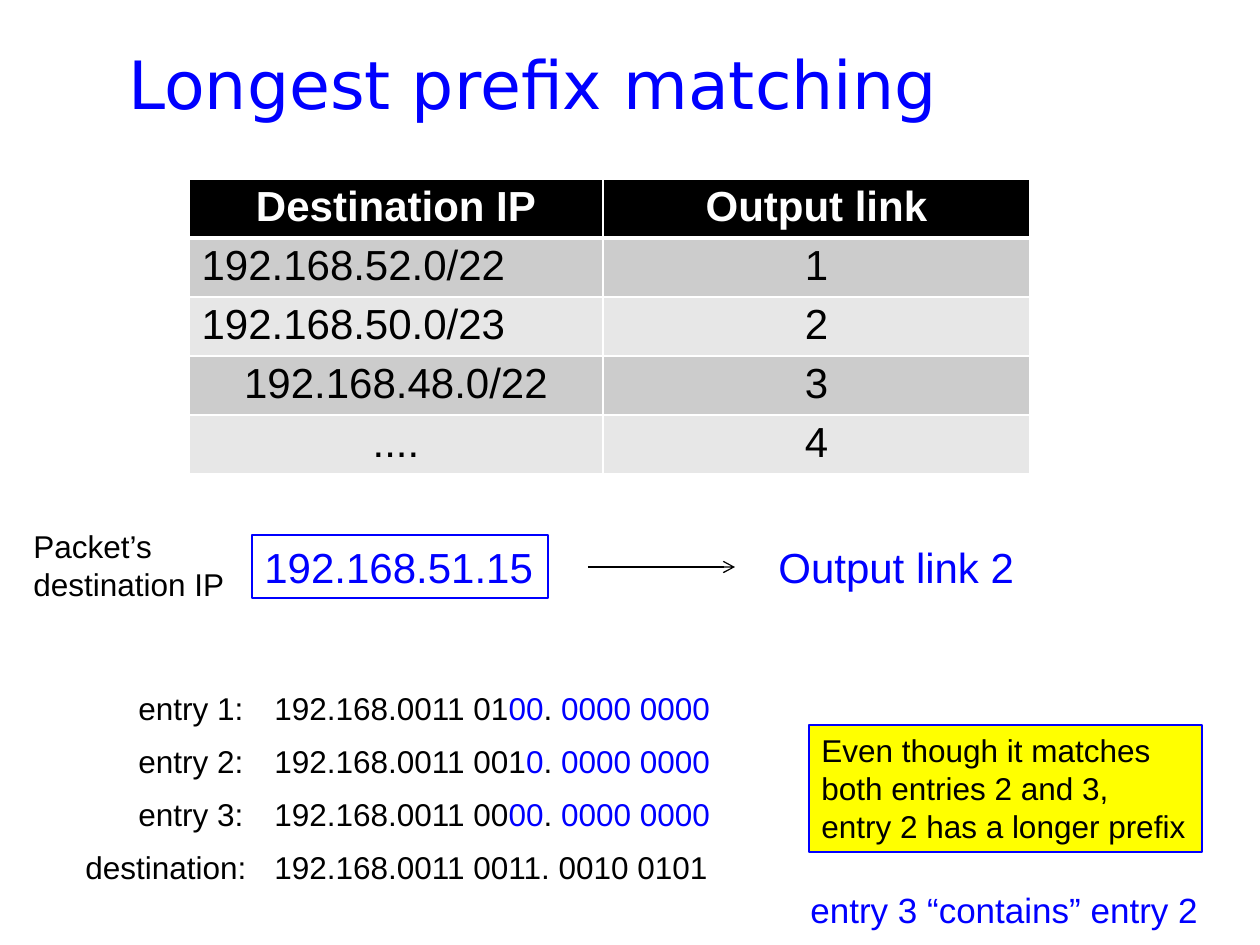
from lxml import etree
from pptx import Presentation
from pptx.dml.color import RGBColor
from pptx.enum.shapes import MSO_CONNECTOR, MSO_SHAPE
from pptx.enum.text import MSO_ANCHOR, MSO_AUTO_SIZE, PP_ALIGN
from pptx.oxml.ns import qn
from pptx.util import Emu, Pt

LEFT, CENTER = PP_ALIGN.LEFT, PP_ALIGN.CENTER
TOP = MSO_ANCHOR.TOP
FIT_SHAPE, NO_FIT = MSO_AUTO_SIZE.SHAPE_TO_FIT_TEXT, MSO_AUTO_SIZE.NONE
RECTANGLE, STRAIGHT = MSO_SHAPE.RECTANGLE, MSO_CONNECTOR.STRAIGHT

EMU_PER_PX = 914400 / 126
COLORS = {
    "white": "FFFFFF", "black": "000000", "blue": "0000FF",
    "yellow": "FFFF00", "dark band": "CCCCCC", "light band": "E7E7E7",
}


def px(length):
    return Emu(round(length * EMU_PER_PX))


def rgb(color):
    return RGBColor.from_string(COLORS[color])


def apply(target, values):
    """Set each named attribute of the target."""
    for attribute, value in values.items():
        setattr(target, attribute, value)


class SlideBuilder:
    """Holds the text style and the slide being filled."""

    font = "Arial"
    thin_line = Pt(0.75)
    fitted = {"word_wrap": False, "auto_size": FIT_SHAPE, "vertical_anchor": TOP}

    def __init__(self, slide):
        self.slide = slide

    def add_lines(self, frame, lines, size, color, align=LEFT, font=None, bold=False):
        """Fill a frame; a line is a string or a list of (text, color) runs."""
        for index, line in enumerate(lines):
            paragraph = frame.add_paragraph() if index else frame.paragraphs[0]
            paragraph.alignment = align
            runs = [(line, color)] if isinstance(line, str) else line
            for text, run_color in runs:
                run = paragraph.add_run()
                run.text = text
                apply(run.font, {"name": font or self.font, "size": Pt(size), "bold": bold})
                run.font.color.rgb = rgb(run_color)

    def title(self, box, text, size, color, font):
        frame = self.slide.shapes.add_textbox(*map(px, box)).text_frame
        apply(frame, {"word_wrap": True, "auto_size": NO_FIT,
                      "vertical_anchor": TOP, "margin_top": px(11)})
        self.add_lines(frame, [text], size, color, font=font)

    def text(self, box, lines, size=18, color="black"):
        frame = self.slide.shapes.add_textbox(*map(px, box)).text_frame
        apply(frame, self.fitted)
        self.add_lines(frame, lines, size, color)

    def box(self, box, lines, size, color, fill=None):
        shape = self.slide.shapes.add_shape(RECTANGLE, *map(px, box))
        shape.shadow.inherit = False
        if fill:
            shape.fill.solid()
            shape.fill.fore_color.rgb = rgb(fill)
        else:
            shape.fill.background()
        shape.line.color.rgb = rgb("blue")
        shape.line.width = self.thin_line
        apply(shape.text_frame, self.fitted)
        self.add_lines(shape.text_frame, lines, size, color)

    def arrow(self, x1, y1, x2, y2):
        connector = self.slide.shapes.add_connector(STRAIGHT, *map(px, (x1, y1, x2, y2)))
        connector.line.color.rgb = rgb("black")
        connector.line.width = self.thin_line
        properties = connector._element.spPr
        etree.SubElement(properties.get_or_add_ln(), qn("a:tailEnd"), type="arrow")
        etree.SubElement(properties, qn("a:effectLst"))

    def table(self, x, y, widths, row_height, header, rows):
        """Add a banded table; each row is a list of (text, alignment)."""
        records = [[(name, CENTER) for name in header]] + rows
        table = self.slide.shapes.add_table(
            len(records), len(widths), px(x), px(y),
            px(sum(widths)), px(row_height * len(records))).table
        for column, width in zip(table.columns, widths):
            column.width = px(width)
        for r, record in enumerate(records):
            table.rows[r].height = px(row_height)
            is_header = r == 0
            band = "black" if is_header else ("light band", "dark band")[r % 2]
            for c, (text, align) in enumerate(record):
                cell = table.cell(r, c)
                apply(cell, {"vertical_anchor": TOP,
                             "margin_top": px(5), "margin_bottom": px(5)})
                self.add_lines(cell.text_frame, [text], 24,
                               "white" if is_header else "black", align, bold=is_header)
                self.borders(cell, {"L": 1, "R": 1, "T": 3 if r == 1 else 1,
                                    "B": 3 if is_header else 1})
                cell.fill.solid()
                cell.fill.fore_color.rgb = rgb(band)

    def borders(self, cell, widths):
        properties = cell._tc.get_or_add_tcPr()
        for side, width in widths.items():
            line = etree.SubElement(properties, qn(f"a:ln{side}"), w=str(int(Pt(width))))
            fill = etree.SubElement(line, qn("a:solidFill"))
            etree.SubElement(fill, qn("a:srgbClr"), val=COLORS["white"])


def main():
    presentation = Presentation()
    presentation.slide_width, presentation.slide_height = px(1260), px(945)
    builder = SlideBuilder(presentation.slides.add_slide(presentation.slide_layouts[6]))

    builder.title((116, 32, 1113, 116), "Longest prefix matching", 38, "blue", "DejaVu Sans")
    builder.table(189, 179, (414, 427), 59, ("Destination IP", "Output link"), [
        [("192.168.52.0/22", LEFT), ("1", CENTER)],
        [("192.168.50.0/23", LEFT), ("2", CENTER)],
        [("192.168.48.0/22", CENTER), ("3", CENTER)],
        [("....", CENTER), ("4", CENTER)],
    ])

    builder.box((252, 535, 296, 63), ["192.168.51.15"], 24, "blue")
    builder.text((21, 521, 218, 89), ["Packet’s", "destination IP"])
    builder.arrow(588, 567, 735, 567)
    builder.text((766, 535, 263, 63), ["Output link 2"], 24, "blue")

    def entry(prefix, free_bits):
        return [(prefix, "black"), (free_bits, "blue"),
                (". ", "black"), ("0000 0000", "blue")]

    comparison = [
        ("entry 1:", 126, 131, entry("192.168.0011 01", "00")),
        ("entry 2:", 126, 131, entry("192.168.0011 001", "0")),
        ("entry 3:", 126, 131, entry("192.168.0011 00", "00")),
        ("destination:", 73, 188, "192.168.0011 0011. 0010 0101"),
    ]
    for row, (label, label_x, label_width, address) in enumerate(comparison):
        y = 683 + 53 * row
        builder.text((label_x, y, label_width, 50), [label])
        builder.text((262, y, 465, 50), [address])

    builder.box((809, 725, 393, 127), [
        "Even though it matches",
        "both entries 2 and 3,",
        "entry 2 has a longer prefix",
    ], 18, "black", "yellow")
    builder.text((798, 882, 416, 55), ["entry 3 “contains” entry 2"], 20, "blue")

    presentation.save("out.pptx")


if __name__ == "__main__":
    main()
